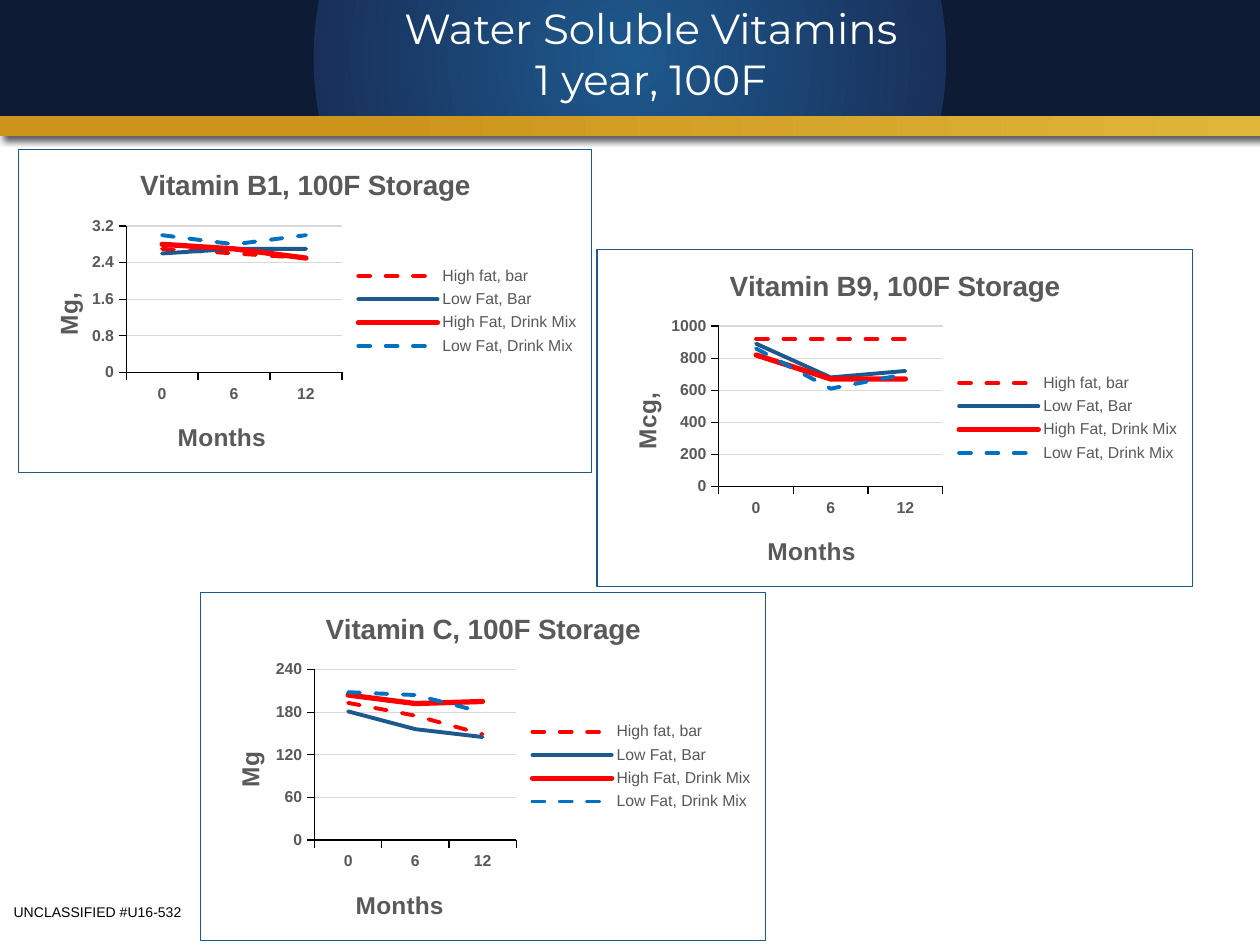
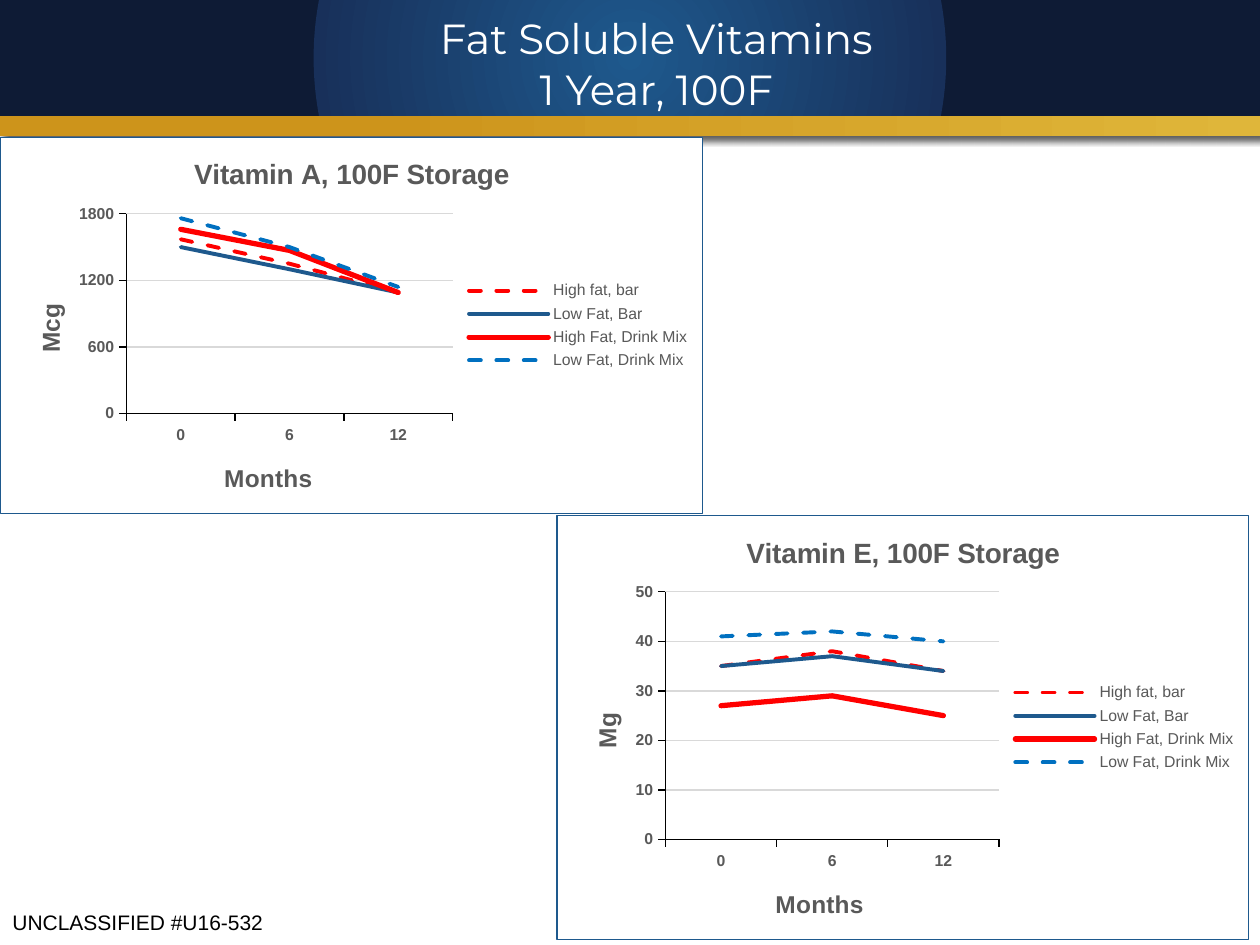
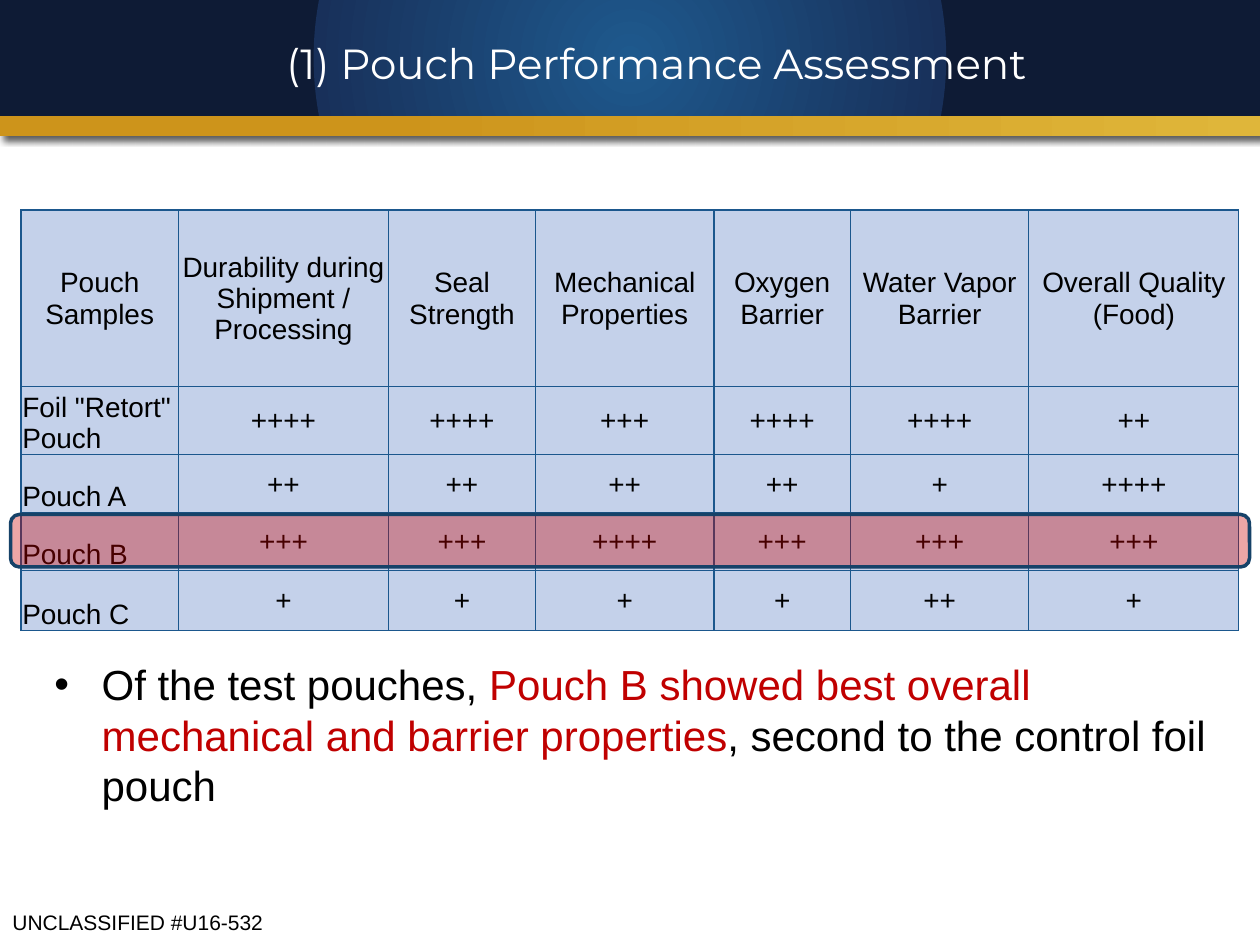
from dataclasses import dataclass
from typing import NamedTuple

from pptx import Presentation
from pptx.chart.data import CategoryChartData
from pptx.dml.color import RGBColor
from pptx.enum.chart import XL_CHART_TYPE as ChartType, XL_LEGEND_POSITION as LegendPos
from pptx.enum.chart import XL_TICK_MARK as TickMark
from pptx.enum.dml import MSO_LINE as LineStyle
from pptx.enum.shapes import MSO_SHAPE as Preset
from pptx.enum.text import MSO_ANCHOR as Anchor, PP_ALIGN as Align
from pptx.oxml import parse_xml
from pptx.oxml.ns import nsdecls, qn
from pptx.util import Pt

# Colours and fonts
WHITE = RGBColor(0xFF, 0xFF, 0xFF)
BLACK = RGBColor(0x00, 0x00, 0x00)
GREY = RGBColor(0x59, 0x59, 0x59)
GRID_GREY = RGBColor(0xD9, 0xD9, 0xD9)
BLUE = RGBColor(0x1E, 0x59, 0x8D)
MID_BLUE = RGBColor(0x18, 0x30, 0x5A)
NAVY = RGBColor(0x0E, 0x1B, 0x35)
PALE_GOLD = RGBColor(0xDF, 0xB6, 0x3A)
GOLD = RGBColor(0xCD, 0x94, 0x1B)
RED = RGBColor(0xFF, 0x00, 0x00)
SKY_BLUE = RGBColor(0x00, 0x70, 0xC0)
CELL_BLUE = RGBColor(0xC4, 0xD1, 0xEA)
BORDER_BLUE = RGBColor(0x1B, 0x57, 0x8D)
OUTLINE_BLUE = RGBColor(0x16, 0x42, 0x68)
HIGHLIGHT_RED = RGBColor(0xCC, 0x00, 0x00)
KEY_RED = RGBColor(0xC0, 0x00, 0x00)
BODY_FONT = "Arial"
TITLE_FONT = "Montserrat"


class Box(NamedTuple):
    left: float
    top: float
    width: float
    height: float

    def lengths(self) -> list:
        return [Pt(length) for length in self]


class SeriesStyle(NamedTuple):
    name: str
    color: RGBColor
    width: float
    dashed: bool


@dataclass
class VitaminChart:
    vitamin: str
    box: Box
    unit: str
    maximum: float
    step: float
    plot_left: float
    values: list


HEADER_BOX = Box(0, 0, 720, 66.2)
GOLD_BOX = Box(0, 59.8, 720, 18)
LOW_TITLE_BOX = Box(132, 12, 486, 48)
FOOTER_BOX = Box(0, 516, 168, 28.8)

MONTHS = ["0", "6", "12"]
DIETS = [
    SeriesStyle("High fat, bar", RED, 2.25, True),
    SeriesStyle("Low Fat, Bar", BLUE, 2.25, False),
    SeriesStyle("High Fat, Drink Mix", RED, 3, False),
    SeriesStyle("Low Fat, Drink Mix", SKY_BLUE, 2.25, True),
]
# Space kept around each plot, and the widths of the axis title letters
PLOT_TOP, PLOT_RIGHT, PLOT_BOTTOM, LABELS_LEFT = 44, 143, 57.5, 42
MONTHS_WIDTH = 50
LETTER_WIDTHS = {"M": 11.7, "g": 8.5, "c": 7.8, ",": 3.9}

WATER_SOLUBLE = [
    VitaminChart("B1", Box(10.2, 85, 328.3, 185.5), "Mg,", 3.2, 0.8, 61.7,
                 [(2.7, 2.6, 2.5), (2.6, 2.7, 2.7), (2.8, 2.7, 2.5), (3, 2.8, 3)]),
    VitaminChart("B9", Box(340.8, 142.2, 341, 193.5), "Mcg,", 1000, 200, 69.7,
                 [(920, 920, 920), (890, 680, 720), (820, 670, 670), (860, 610, 700)]),
    VitaminChart("C", Box(114, 338.4, 324, 199.4), "Mg", 240, 60, 65.5,
                 [(193, 175, 149), (181, 156, 145), (204, 192, 195), (208, 204, 180)]),
]
FAT_SOLUBLE = [
    VitaminChart("E", Box(318, 294, 396, 243.4), "Mg", 50, 10, 62,
                 [(35, 38, 34), (35, 37, 34), (27, 29, 25), (41, 42, 40)]),
    VitaminChart("A", Box(0, 78, 401.8, 216), "Mcg", 1800, 600, 72,
                 [(1570, 1350, 1090), (1500, 1300, 1090), (1660, 1470, 1090), (1760, 1500, 1140)]),
]

POUCH_COLUMNS = [90, 120, 84, 102, 78, 102, 120]
POUCH_HEIGHTS = [100.8, 33, 33, 33, 34.5]
POUCH_ROWS = [
    ["Pouch Samples", "Durability during Shipment / Processing", "Seal Strength",
     "Mechanical Properties", "Oxygen Barrier", "Water Vapor Barrier", "Overall Quality (Food)"],
    ['Foil "Retort" Pouch', "++++", "++++", "+++", "++++", "++++", "++"],
    ["Pouch A", "++", "++", "++", "++", "+", "++++"],
    ["Pouch B", "+++", "+++", "++++", "+++", "+++", "+++"],
    ["Pouch C", "+", "+", "+", "+", "++", "+"],
]


def style_font(font, size: float, color: RGBColor, bold: bool = False, name: str = BODY_FONT) -> None:
    font.size, font.name, font.bold = Pt(size), name, bold
    font.color.rgb = color


def add_text(slide, box: Box, text: str, size: float, color: RGBColor, name: str = BODY_FONT):
    frame = slide.shapes.add_textbox(*box.lengths()).text_frame
    frame.word_wrap = True
    frame.text = text
    style_font(frame.paragraphs[0].font, size, color, name=name)
    return frame


def add_band(slide, box: Box, stops: list, direction: str):
    """Draw a borderless rectangle with a gradient of (percent, colour) stops."""
    band = slide.shapes.add_shape(Preset.RECTANGLE, *box.lengths())
    band.shadow.inherit = False
    band.line.fill.background()
    band.fill.background()
    stop_xml = "".join(f'<a:gs pos="{percent * 1000}"><a:srgbClr val="{color}"/></a:gs>'
                       for percent, color in stops)
    properties = band.element.spPr
    properties.replace(properties.find(qn("a:noFill")), parse_xml(
        f'<a:gradFill {nsdecls("a")} rotWithShape="1"><a:gsLst>{stop_xml}</a:gsLst>{direction}</a:gradFill>'))
    return band


def add_frame(slide, title: str, title_box: Box, footer_box: Box, footer_size: float) -> None:
    """Draw the bands, title and footer that every slide has."""
    gold = add_band(slide, GOLD_BOX, [(0, PALE_GOLD), (70, GOLD)], '<a:lin ang="10800000" scaled="0"/>')
    gold.element.spPr.find(qn("a:effectLst")).append(parse_xml(
        f'<a:outerShdw {nsdecls("a")} blurRad="{Pt(4)}" dist="{Pt(3)}" dir="2700000" algn="tl">'
        '<a:srgbClr val="000000"><a:alpha val="64000"/></a:srgbClr></a:outerShdw>'))
    add_band(slide, HEADER_BOX, [(0, BLUE), (50, MID_BLUE), (50, NAVY)],
             '<a:path path="circle"><a:fillToRect l="50000" t="50000" r="50000" b="50000"/></a:path>')
    heading = add_text(slide, title_box, title, 24, WHITE, TITLE_FONT)
    heading.vertical_anchor = Anchor.MIDDLE
    heading.paragraphs[0].alignment = Align.CENTER
    add_text(slide, footer_box, "UNCLASSIFIED #U16-532", footer_size, BLACK)


def place_in_chart(part, index: int, fractions: dict, inner: bool = False) -> None:
    """Give a chart part a manual layout in fractions of the chart."""
    for automatic in part.findall(qn("c:layout")):
        part.remove(automatic)
    target = '<c:layoutTarget val="inner"/>' if inner else ""
    modes = "".join(f'<c:{key}Mode val="edge"/>' for key in "xy")
    sizes = "".join(f'<c:{key} val="{value:.4f}"/>' for key, value in fractions.items())
    part.insert(index, parse_xml(
        f'<c:layout {nsdecls("c")}><c:manualLayout>{target}{modes}{sizes}</c:manualLayout></c:layout>'))


def set_title(title, text: str, size: float) -> None:
    title.text_frame.text = text
    style_font(title.text_frame.paragraphs[0].font, size, GREY, True)


def style_axis(axis, title: str) -> None:
    set_title(axis.axis_title, title, 14)
    axis.major_tick_mark, axis.minor_tick_mark = TickMark.OUTSIDE, TickMark.NONE
    axis.format.line.color.rgb = BLACK
    axis.format.line.width = Pt(0.75)
    style_font(axis.tick_labels.font, 9, GREY, True)


def arrange_chart(chart, spec_: VitaminChart) -> None:
    """Place the plot and both axis titles by the shared margins."""
    _, _, width, height = spec_.box
    place_in_chart(chart.element.find(f".//{qn('c:plotArea')}"), 0, {
        "x": spec_.plot_left / width,
        "y": PLOT_TOP / height,
        "w": (width - spec_.plot_left - PLOT_RIGHT) / width,
        "h": (height - PLOT_TOP - PLOT_BOTTOM) / height,
    }, inner=True)
    months_center = (LABELS_LEFT + width - PLOT_RIGHT) / 2
    place_in_chart(chart.category_axis.axis_title.element, 1, {
        "x": (months_center - MONTHS_WIDTH / 2) / width, "y": (height - 32) / height})
    unit_center = (PLOT_TOP + height - PLOT_BOTTOM + 11) / 2
    unit_length = sum(LETTER_WIDTHS[letter] for letter in spec_.unit)
    unit_title = chart.value_axis.axis_title.element
    place_in_chart(unit_title, 1, {"x": 17 / width, "y": (unit_center - unit_length / 2) / height})
    body = unit_title.find(f".//{qn('a:bodyPr')}")
    body.set("rot", "-5400000")
    body.set("vert", "horz")


def add_vitamin_chart(slide, vitamin: VitaminChart) -> None:
    data = CategoryChartData()
    data.categories = MONTHS
    for diet, values in zip(DIETS, vitamin.values):
        data.add_series(diet.name, values)
    chart = slide.shapes.add_chart(ChartType.LINE, *vitamin.box.lengths(), data).chart
    style_font(chart.font, 10, BLACK)
    chart.has_title = True
    set_title(chart.chart_title, f"Vitamin {vitamin.vitamin}, 100F Storage", 16)
    chart.chart_title.include_in_layout = False

    # Axes and grid
    style_axis(chart.category_axis, "Months")
    amount = chart.value_axis
    style_axis(amount, vitamin.unit)
    amount.minimum_scale, amount.maximum_scale, amount.major_unit = 0, vitamin.maximum, vitamin.step
    amount.has_major_gridlines = True
    amount.major_gridlines.format.line.color.rgb = GRID_GREY
    amount.major_gridlines.format.line.width = Pt(0.75)

    # Legend
    chart.has_legend = True
    chart.legend.position = LegendPos.RIGHT
    chart.legend.include_in_layout = False
    style_font(chart.legend.font, 9, GREY)

    # Lines with round ends
    plot = chart.plots[0]
    plot.vary_by_categories = False
    for series, diet in zip(plot.series, DIETS):
        series.smooth = False
        line = series.format.line
        line.color.rgb, line.width = diet.color, Pt(diet.width)
        if diet.dashed:
            line.dash_style = LineStyle.DASH
    for series_xml in chart.element.iter(qn("c:ser")):
        series_xml.find(f"{qn('c:spPr')}/{qn('a:ln')}").set("cap", "rnd")

    # Chart background and border
    chart.element.find(qn("c:chart")).addnext(parse_xml(
        f'<c:spPr {nsdecls("c", "a")}><a:solidFill><a:srgbClr val="{WHITE}"/></a:solidFill>'
        f'<a:ln w="{Pt(0.75)}"><a:solidFill><a:srgbClr val="{BLUE}"/></a:solidFill></a:ln></c:spPr>'))
    arrange_chart(chart, vitamin)


def fill_cell(cell, text: str, is_sample: bool) -> None:
    cell.text = text
    cell.margin_left = cell.margin_right = cell.margin_top = Pt(0.75)
    cell.margin_bottom = 0
    cell.vertical_anchor = Anchor.BOTTOM if is_sample else Anchor.MIDDLE
    label = cell.text_frame.paragraphs[0]
    label.alignment = Align.LEFT if is_sample else Align.CENTER
    style_font(label.font, 16, BLACK)
    properties = cell._tc.get_or_add_tcPr()
    for side in "LRTB":
        properties.append(parse_xml(
            f'<a:ln{side} {nsdecls("a")} w="{Pt(0.75)}"><a:solidFill>'
            f'<a:srgbClr val="{BORDER_BLUE}"/></a:solidFill></a:ln{side}>'))
    cell.fill.solid()
    cell.fill.fore_color.rgb = CELL_BLUE


def add_pouch_table(slide) -> None:
    box = Box(12, 120, sum(POUCH_COLUMNS), sum(POUCH_HEIGHTS))
    table = slide.shapes.add_table(len(POUCH_ROWS), len(POUCH_COLUMNS), *box.lengths()).table
    table.first_row = table.horz_banding = False
    for column, width in zip(table.columns, POUCH_COLUMNS):
        column.width = Pt(width)
    for row_index, (height, texts) in enumerate(zip(POUCH_HEIGHTS, POUCH_ROWS)):
        table.rows[row_index].height = Pt(height)
        for column_index, text in enumerate(texts):
            fill_cell(table.cell(row_index, column_index), text, row_index > 0 and column_index == 0)


def add_highlight(slide) -> None:
    highlight = slide.shapes.add_shape(Preset.ROUNDED_RECTANGLE, *Box(6, 294, 708, 30).lengths())
    highlight.shadow.inherit = False
    highlight.fill.solid()
    highlight.fill.fore_color.rgb = HIGHLIGHT_RED
    highlight.line.color.rgb = OUTLINE_BLUE
    highlight.line.width = Pt(2)
    tint = highlight.element.spPr.find(f"{qn('a:solidFill')}/{qn('a:srgbClr')}")
    tint.append(parse_xml(f'<a:alpha {nsdecls("a")} val="35000"/>'))


def add_conclusion(slide) -> None:
    frame = slide.shapes.add_textbox(*Box(24, 373, 684, 96).lengths()).text_frame
    frame.word_wrap = True
    conclusion = frame.paragraphs[0]
    properties = conclusion._p.get_or_add_pPr()
    properties.set("marL", str(Pt(27)))
    properties.set("indent", str(Pt(-27)))
    properties.append(parse_xml(f'<a:buFont {nsdecls("a")} typeface="{BODY_FONT}"/>'))
    properties.append(parse_xml(f'<a:buChar {nsdecls("a")} char="•"/>'))
    style_font(conclusion.font, 24, BLACK)
    for text, color in [
        ("Of the test pouches, ", BLACK),
        ("Pouch B showed best overall mechanical and barrier properties", KEY_RED),
        (", second to the control foil pouch", BLACK),
    ]:
        run = conclusion.add_run()
        run.text = text
        run.font.color.rgb = color


def main() -> None:
    deck = Presentation()
    deck.slide_width, deck.slide_height = Pt(720), Pt(540)
    blank = deck.slide_layouts[6]

    # Water soluble vitamins
    water = deck.slides.add_slide(blank)
    add_frame(water, "Water Soluble Vitamins\v1 year, 100F", Box(120, 6.5, 504, 48),
              Box(0.7, 512.6, 168, 28.8), 8)
    for vitamin in WATER_SOLUBLE:
        add_vitamin_chart(water, vitamin)

    # Fat soluble vitamins
    fat = deck.slides.add_slide(blank)
    add_frame(fat, "Fat Soluble Vitamins\v1 Year, 100F", LOW_TITLE_BOX, FOOTER_BOX, 12)
    for vitamin in FAT_SOLUBLE:
        add_vitamin_chart(fat, vitamin)

    # Pouch assessment
    pouches = deck.slides.add_slide(blank)
    add_frame(pouches, "(1) Pouch Performance Assessment", LOW_TITLE_BOX, FOOTER_BOX, 12)
    add_pouch_table(pouches)
    add_highlight(pouches)
    add_conclusion(pouches)

    deck.save("out.pptx")


if __name__ == "__main__":
    main()
